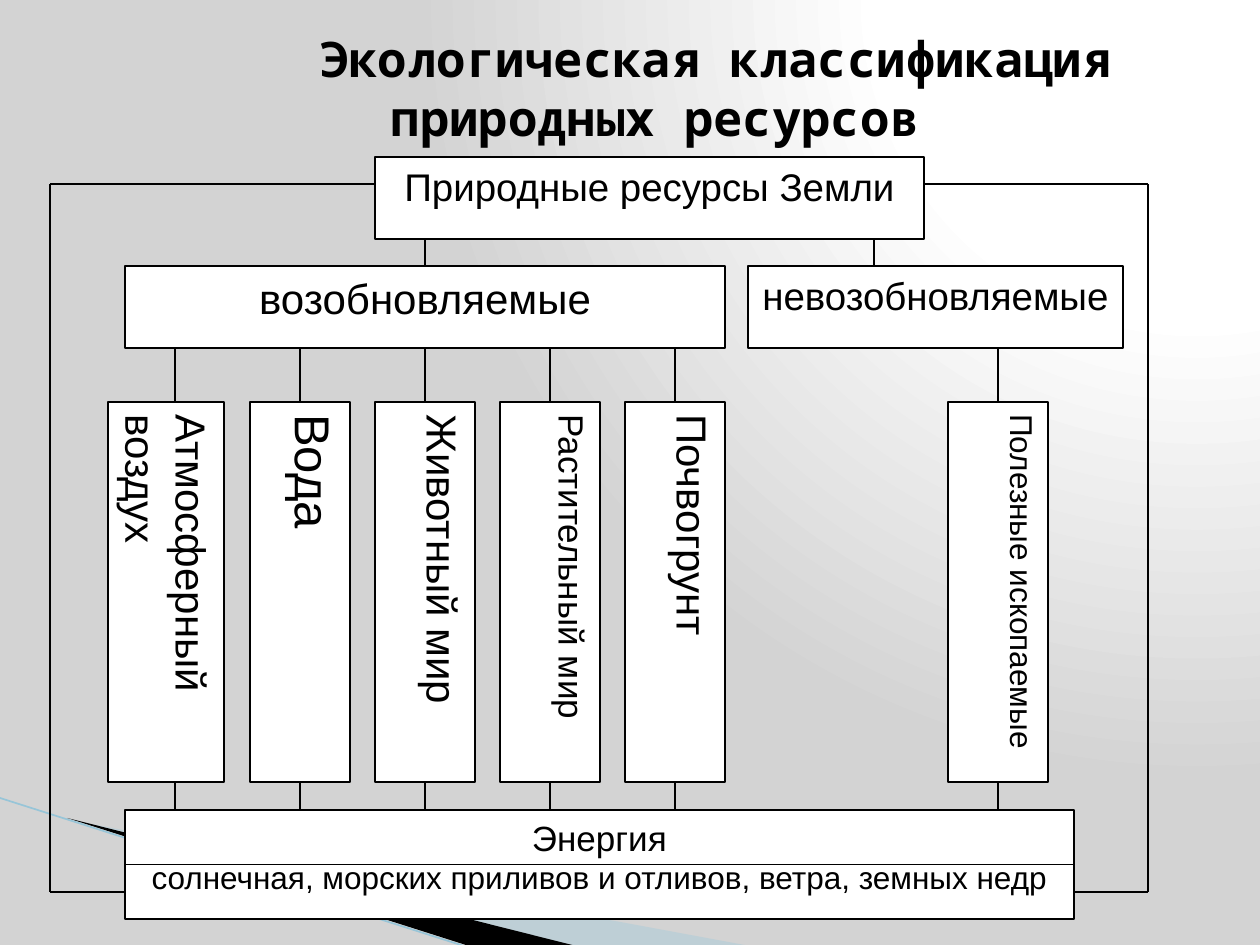
from lxml import etree
from pptx import Presentation
from pptx.dml.color import RGBColor
from pptx.enum.shapes import MSO_CONNECTOR, MSO_SHAPE
from pptx.enum.text import MSO_ANCHOR, PP_ALIGN
from pptx.oxml import parse_xml
from pptx.oxml.ns import nsdecls, qn
from pptx.util import Pt

PX = 914400 // 126
BLACK = RGBColor(0, 0, 0)
WHITE = RGBColor(255, 255, 255)
PALE = RGBColor(0xA0, 0xCB, 0xDC)
TEAL = RGBColor(0x97, 0xC5, 0xD8)
RECT = MSO_SHAPE.RECTANGLE
LINE = MSO_CONNECTOR.STRAIGHT
TOP = MSO_ANCHOR.TOP
MID = PP_ALIGN.CENTER
LEFT = PP_ALIGN.LEFT

TITLE = "Экологическая классификация природных ресурсов"
BOXES = {
    "root": ((375, 157, 549, 82), [("Природные ресурсы Земли", 22)]),
    "renew": ((125, 266, 600, 82), [("возобновляемые", 24)]),
    "finite": ((748, 266, 375, 82), [("невозобновляемые", 22)]),
    "power": ((125, 810, 949, 109), [
        ("Энергия", 20),
        ("солнечная, морских приливов и отливов, ветра, земных недр", 18),
    ]),
}
COLS = [
    ("Атмосферный воздух", 24, 175, 116),
    ("Вода", 28, 300, 100),
    ("Животный мир", 24, 425, 100),
    ("Растительный мир", 20, 550, 100),
    ("Почвогрунт", 24, 675, 100),
    ("Полезные ископаемые", 18, 998, 100),
]
COL_TOP, COL_H = 402, 380
LOOPS = [
    [(375, 184), (50, 184), (50, 892), (125, 892)],
    [(924, 184), (1148, 184), (1148, 892), (1074, 892)],
]
WAVES = [
    ([(69, 820), (750, 946), (575, 946)], PALE, 40),
    ([(67, 818), (576, 946), (469, 946)], BLACK, 100),
]
BACK = f"""<p:bg {nsdecls("p", "a")}><p:bgPr><a:gradFill rotWithShape="1"><a:gsLst>
<a:gs pos="0"><a:srgbClr val="FFFFFF"/></a:gs>
<a:gs pos="40000"><a:srgbClr val="FFFFFF"/></a:gs>
<a:gs pos="100000"><a:srgbClr val="D3D3D3"/></a:gs></a:gsLst>
<a:path path="circle"><a:fillToRect l="95000" t="-106000" r="5000" b="206000"/></a:path>
</a:gradFill><a:effectLst/></p:bgPr></p:bg>"""


def assign(item, values):
    for name, value in values.items():
        setattr(item, name, value)


def write(frame, rows, align, face, bold=False):
    assign(frame, {"word_wrap": True, "vertical_anchor": TOP})
    for i, (text, size) in enumerate(rows):
        para = frame.add_paragraph() if i else frame.paragraphs[0]
        para.alignment = align
        run = para.add_run()
        run.text = text
        assign(run.font, {"size": Pt(size), "name": face, "bold": bold})
        run.font.color.rgb = BLACK


def add_box(place, rows, align=MID):
    box = shapes.add_shape(RECT, *[v * PX for v in place])
    box.shadow.inherit = False
    box.fill.solid()
    box.fill.fore_color.rgb = WHITE
    box.line.color.rgb = BLACK
    box.line.width = Pt(0.75)
    write(box.text_frame, rows, align, "Arial")
    return box


def add_line(start, end, head=None, tail=None, color=BLACK, width=0.75):
    line = shapes.add_connector(LINE, *[v * PX for v in start + end])
    line.line.color.rgb = color
    line.line.width = Pt(width)
    etree.SubElement(line._element.spPr, qn("a:effectLst"))
    if head:
        line.begin_connect(*head)
    if tail:
        line.end_connect(*tail)


def add_wave(points, color, alpha):
    form = shapes.build_freeform(*points[0], scale=PX)
    form.add_line_segments(points[1:], close=True)
    wave = form.convert_to_shape()
    wave.shadow.inherit = False
    wave.fill.solid()
    wave.fill.fore_color.rgb = color
    wave.line.fill.background()
    if alpha < 100:
        tone = wave._element.spPr.find(qn("a:solidFill"))[0]
        etree.SubElement(tone, qn("a:alpha"), val=str(alpha * 1000))


deck = Presentation()
assign(deck, {"slide_width": 1260 * PX, "slide_height": 945 * PX})
slide = deck.slides.add_slide(deck.slide_layouts[6])
shapes = slide.shapes
slide._element.cSld.insert(0, parse_xml(BACK))

for wave in WAVES:
    add_wave(*wave)
add_line((0, 798), (467, 947), color=TEAL, width=0.95)

title = shapes.add_textbox(0, 20 * PX, 1260 * PX, 188 * PX).text_frame
title.margin_top = 9 * PX
write(title, [(TITLE, 28)], MID, "Noto Sans Mono", True)
props = title.paragraphs[0]._p.get_or_add_pPr()
props.set("marL", str(50 * PX))
props.set("indent", str(121 * PX))

made = {name: add_box(*box) for name, box in BOXES.items()}
renew, power = made["renew"], made["power"]
add_line((425, 239), (425, 266), tail=(renew, 0))
add_line((874, 239), (874, 266))

for text, size, mid, wide in COLS:
    left = min(mid - 50, 224 - wide) if wide > 100 else mid - 50
    col = add_box((left, COL_TOP, wide, COL_H), [(text, size)], LEFT)
    col.text_frame._txBody.bodyPr.set("vert", "eaVert")
    even = left + wide / 2 == mid
    add_line((mid, 348), (mid, COL_TOP),
             (renew, 2) if mid == 425 else None, (col, 0) if even else None)
    add_line((mid, COL_TOP + COL_H), (mid, 810), (col, 2) if even else None)

for loop in LOOPS:
    for start, end in zip(loop, loop[1:]):
        add_line(start, end)
add_line((125, 865), (1074, 865), (power, 1), (power, 3))

deck.save("out.pptx")
